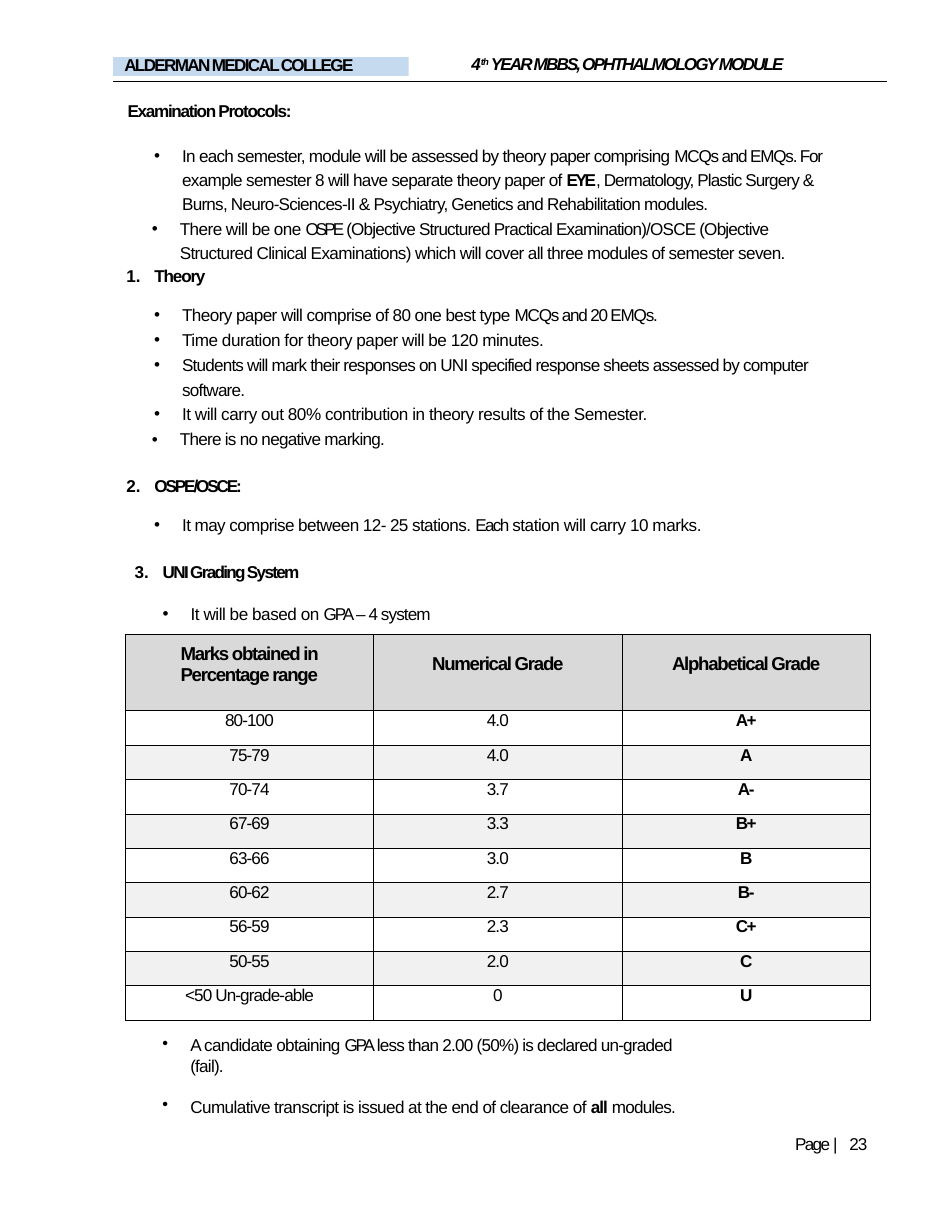
from lxml import etree
from pptx import Presentation
from pptx.dml.color import RGBColor
from pptx.enum import shapes, text
from pptx.oxml import ns
from pptx.util import Pt

BLACK = RGBColor(0x00, 0x00, 0x00)
BLUE = RGBColor(0xC5, 0xD9, 0xEF)
GREY = RGBColor(0xD9, 0xD9, 0xD9)
PALE = RGBColor(0xF1, 0xF1, 0xF1)
FACE = "Arial"
DOT = "•"

INTRO = [
    dict(runs=[("Examination Protocols:", -0.85)], bold=True, left=1.4, before=1),
    dict(runs=[("In each semester, module will be assessed by theory paper comprising ", -0.48),
               ("MCQs and EMQs. For ", -0.8),
               ("example semester 8 will have separate theory paper of ", -0.46),
               ("EYE", -1.6, True),
               (", Dermatology, Plastic Surgery & ", -0.6),
               ("Burns, Neuro-Sciences-II & Psychiatry, Genetics and Rehabilitation modules.", -0.5)],
         mark=DOT, left=36.5, right=15, line=1.17, before=12.9),
    dict(runs=[("There will be one ", -0.37), ("OSPE ", -1.9),
               ("(Objective Structured Practical Examination)/OSCE (Objective ", -0.53),
               ("Structured Clinical Examinations) which will cover all three modules "
                "of semester seven.", -0.43)],
         mark=DOT, left=35, right=25, line=1.17, before=0.6),
    dict(runs=[("Theory", -0.8)], bold=True, mark=1, left=18.7, before=2.1),
    dict(runs=[("Theory paper will comprise of 80 one best type ", -0.4),
               ("MCQs and 20 EMQs.", -0.8)], mark=DOT, left=36.5, before=11.8),
    dict(runs=[("Time duration for theory paper will be 120 minutes.", -0.3)],
         mark=DOT, left=36.5, before=2.8),
    dict(runs=[("Students will mark their responses on UNI specified response sheets "
                "assessed by computer software.", -0.55)],
         mark=DOT, left=36.5, line=1.18, before=0.6),
    dict(runs=[("It will carry out 80% contribution in theory results of the Semester.", -0.32)],
         mark=DOT, left=36.5, before=2.8),
    dict(runs=[("There is no negative marking.", -0.48)], mark=DOT, left=35, before=2.9),
    dict(runs=[("OSPE/OSCE:", -1.4)], bold=True, mark=2, left=18.7, before=17),
    dict(runs=[("It may comprise between 12- 25 stations. ", -0.4), ("Each ", -1.1),
               ("station will carry 10 marks.", -0.32)], mark=DOT, left=36.5, before=11.8),
    dict(runs=[("UNI Grading System", -1.1)], bold=True, mark=3, left=24, before=17),
    dict(runs=[("It will be based on ", -0.32), ("GPA ", -1.4), ("– 4 system", -0.6)],
         mark=DOT, left=42, before=13.8),
]
NOTES = [
    dict(runs=[("A candidate obtaining ", -0.45), ("GPA ", -1.4),
               ("less than 2.00 (50%) is declared un-graded (fail).", -0.5)],
         mark=DOT, left=18.7, right=8, before=1),
    dict(runs=[("Cumulative transcript is issued at the end of clearance of ", -0.4),
               ("all ", -0.6, True), ("modules.", -0.5)],
         mark=DOT, left=18.7, before=13.2),
]
HEADS = ["Marks obtained in Percentage range", "Numerical Grade", "Alphabetical Grade"]
GRADES = [
    ("80-100", "4.0", "A+"), ("75-79", "4.0", "A"), ("70-74", "3.7", "A-"),
    ("67-69", "3.3", "B+"), ("63-66", "3.0", "B"), ("60-62", "2.7", "B-"),
    ("56-59", "2.3", "C+"), ("50-55", "2.0", "C"), ("<50 Un-grade-able", "0", "U"),
]


def style(font, size, bold, slant):
    """Set the common face of a paragraph or run."""
    font.name, font.size, font.bold, font.italic = FACE, Pt(size), bold, slant
    font.color.rgb = BLACK


def write(para, runs, size=11, bold=False, slant=False, mark=None, left=0, hang=-18,
          right=0, line=None, before=0, align=text.PP_ALIGN.LEFT):
    """Fill a paragraph with spaced runs, indents and a bullet or number."""
    prop = para._p.get_or_add_pPr()
    prop.set("marL", str(Pt(left)))
    prop.set("marR", str(Pt(right)))
    prop.set("indent", str(Pt(hang if mark else 0)))
    if mark == DOT:
        etree.SubElement(prop, ns.qn("a:buChar"), char=DOT)
    elif mark:
        etree.SubElement(prop, ns.qn("a:buAutoNum"), type="arabicPeriod", startAt=str(mark))
    else:
        etree.SubElement(prop, ns.qn("a:buNone"))
    para.alignment = align
    para.space_before = Pt(before)
    para.space_after = Pt(0)
    para.line_spacing = line or 1.0
    style(para.font, size, bold, slant)
    for words, gap, *heavy in runs:
        run = para.add_run()
        run.text = words
        style(run.font, size, bool(heavy) or bold, slant)
        run._r.get_or_add_rPr().set("spc", str(round(gap * 100)))


def fill(shape, items, box, wrap=True):
    """Place a shape and write its paragraphs."""
    shape.left, shape.top, shape.width, shape.height = map(Pt, box)
    frame = shape.text_frame
    frame.margin_left = frame.margin_right = frame.margin_top = frame.margin_bottom = 0
    frame.auto_size = text.MSO_AUTO_SIZE.NONE
    frame.vertical_anchor = text.MSO_ANCHOR.TOP
    frame.word_wrap = wrap
    for i, item in enumerate(items):
        write(frame.add_paragraph() if i else frame.paragraphs[0], **item)


def add_head(slide):
    """Add the college bar, the module title and the rule below them."""
    bar = slide.shapes.add_shape(shapes.MSO_SHAPE.RECTANGLE, 0, 0, 0, 0)
    bar.shadow.inherit = False
    bar.fill.solid()
    bar.fill.fore_color.rgb = BLUE
    bar.line.fill.background()
    name = dict(runs=[("ALDERMAN MEDICAL COLLEGE", -1.1)], bold=True, left=7.2, line=Pt(11.6))
    fill(bar, [name], (72.7, 36.7, 190, 12.2))
    title = dict(runs=[("4", -0.3), ("th ", -0.5), ("YEAR MBBS, OPHTHALMOLOGY MODULE", -1.25)],
                 bold=True, slant=True, before=1)
    fill(slide.shapes.title, [title], (303, 34.5, 262.8, 14.4))
    sup = slide.shapes.title.text_frame.paragraphs[0].runs[1]
    sup.font.size = Pt(10.5)
    sup._r.get_or_add_rPr().set("baseline", "32000")
    rule = slide.shapes.add_connector(shapes.MSO_CONNECTOR.STRAIGHT,
                                      Pt(72.7), Pt(52.5), Pt(570.2), Pt(52.5))
    rule.line.color.rgb = BLACK
    rule.line.width = Pt(0.75)
    etree.SubElement(rule._element.spPr, ns.qn("a:effectLst"))


def dress(cell, shade, top=0):
    """Give a cell its borders, fill and margins."""
    prop = cell._tc.get_or_add_tcPr()
    for side in ("lnL", "lnR", "lnT", "lnB"):
        edge = etree.SubElement(prop, ns.qn(f"a:{side}"), w=str(Pt(0.5)))
        paint = etree.SubElement(edge, ns.qn("a:solidFill"))
        etree.SubElement(paint, ns.qn("a:srgbClr"), val=str(BLACK))
    if shade:
        cell.fill.solid()
        cell.fill.fore_color.rgb = shade
    else:
        cell.fill.background()
    cell.margin_left = cell.margin_right = cell.margin_bottom = 0
    cell.margin_top = Pt(top)


def add_grades(slide):
    """Add the grading table."""
    size = (len(GRADES) + 1, len(HEADS))
    table = slide.shapes.add_table(*size, Pt(80.6), Pt(408), Pt(479), Pt(247.9)).table
    table.first_row = table.horz_banding = False
    for col in table.columns:
        col.width = Pt(159.67)
    for i, row in enumerate(table.rows):
        row.height = Pt(22.1 if i else 49)
    mid = text.PP_ALIGN.CENTER
    for c, head in enumerate(HEADS):
        cell = table.cell(0, c)
        dress(cell, GREY, 12 if c else 5.3)
        place = dict(align=mid) if c else dict(left=35.5, right=33.5, line=1.02)
        write(cell.text_frame.paragraphs[0], [(head, -0.83)], 12, True, **place)
    for r, grade in enumerate(GRADES, 1):
        for c, (word, gap) in enumerate(zip(grade, (-0.6, -0.5, -1))):
            cell = table.cell(r, c)
            dress(cell, None if r % 2 else PALE)
            write(cell.text_frame.paragraphs[0], [(word, gap)], bold=c == 2,
                  line=Pt(12.6), align=mid)


def main():
    """Build the page and save it."""
    deck = Presentation()
    deck.slide_width, deck.slide_height = Pt(612), Pt(792)
    slide = deck.slides.add_slide(deck.slide_layouts[1])
    add_head(slide)
    fill(slide.placeholders[1], INTRO, (80.6, 64.8, 477.4, 340.6))
    add_grades(slide)
    notes = slide.shapes.add_textbox(0, 0, 0, 0)
    fill(notes, NOTES, (103.7, 665.3, 355.7, 53))
    page = slide.shapes.add_textbox(0, 0, 0, 0)
    count = dict(runs=[("Page ", -1.1), ("| ", 2.2), ("23", -0.6)], left=0.7, line=Pt(11.5))
    fill(page, [count], (510.5, 730, 46.1, 13), wrap=False)
    deck.save("out.pptx")


if __name__ == "__main__":
    main()
